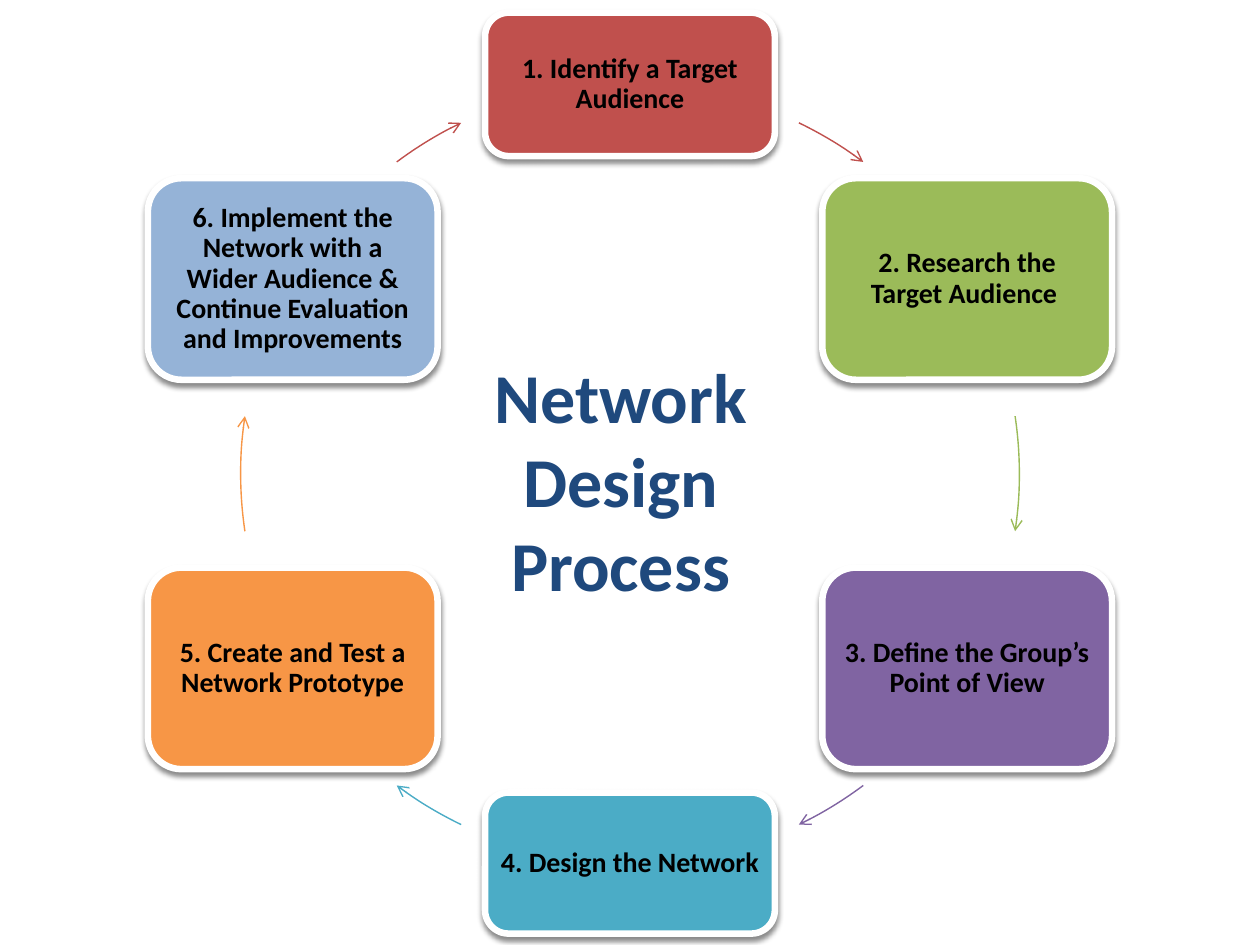
from math import cos, radians, sin

from lxml import etree
from pptx import Presentation
from pptx.dml.color import RGBColor
from pptx.enum.shapes import MSO_SHAPE as Shape
from pptx.enum.text import MSO_ANCHOR as Anchor, MSO_AUTO_SIZE as AutoSize, PP_ALIGN as Align
from pptx.oxml import parse_xml
from pptx.oxml.ns import nsdecls, qn
from pptx.util import Pt

COLORS = {
    "red": "C0504D",
    "green": "9BBB59",
    "purple": "8064A2",
    "teal": "4BACC6",
    "orange": "F79646",
    "blue": "95B3D7",
    "navy": "1F497D",
    "black": "000000",
    "white": "FFFFFF",
}
CENTER_X, CENTER_Y, RADIUS = 360, 270.7, 222.5
BOX_WIDTH = 165.6

STEPS = [
    ("1. Identify a Target Audience", "red", 82),
    ("2. Research the Target Audience ", "green", 115.2),
    ("3. Define the Group’s Point of View", "purple", 115.2),
    ("4. Design the Network", "teal", 80.6),
    ("5. Create and Test a Network Prototype", "orange", 115.2),
    ("6. Implement the Network with a Wider Audience & Continue Evaluation and Improvements",
     "blue", 115.2),
]
ARROWS = [
    (25.7, 36.8, "red"),
    (81.5, 98.5, "green"),
    (143.2, 154.3, "purple"),
    (205.7, 216.8, "teal"),
    (261.5, 278.5, "orange"),
    (323.2, 334.3, "red"),
]


def rgb(name):
    return RGBColor.from_string(COLORS[name])


def write_centered(text_frame, text, size, color):
    text_frame.word_wrap = True
    paragraph = text_frame.paragraphs[0]
    paragraph.text = text
    paragraph.alignment = Align.CENTER
    font = paragraph.font
    font.name, font.size, font.bold = "Calibri", Pt(size), True
    font.color.rgb = rgb(color)
    return paragraph


def add_soft_shadow(shape):
    shape.shadow.inherit = False
    effects = shape._element.spPr.find(qn("a:effectLst"))
    effects.append(parse_xml(
        f'<a:outerShdw {nsdecls("a")} blurRad="{Pt(3)}" dist="{Pt(2.4)}" dir="5400000" '
        f'rotWithShape="0"><a:srgbClr val="{COLORS["black"]}"><a:alpha val="45000"/>'
        '</a:srgbClr></a:outerShdw>'))


def add_step(slide, angle, text, color, height):
    left = CENTER_X + RADIUS * sin(radians(angle)) - BOX_WIDTH / 2
    top = CENTER_Y - RADIUS * cos(radians(angle)) - height / 2
    shape = slide.shapes.add_shape(
        Shape.ROUNDED_RECTANGLE, Pt(left), Pt(top), Pt(BOX_WIDTH), Pt(height))
    shape.fill.solid()
    shape.fill.fore_color.rgb = rgb(color)
    shape.line.color.rgb = rgb("white")
    shape.line.width = Pt(3.75)
    add_soft_shadow(shape)
    text_frame = shape.text_frame
    text_frame.vertical_anchor = Anchor.MIDDLE
    text_frame.margin_left = text_frame.margin_right = Pt(5)
    text_frame.margin_top = text_frame.margin_bottom = Pt(5)
    write_centered(text_frame, text, 16, "black").line_spacing = 0.9


def add_arc_arrow(slide, start, end, color):
    arc = slide.shapes.add_shape(
        Shape.ARC, Pt(CENTER_X - RADIUS), Pt(CENTER_Y - RADIUS), Pt(2 * RADIUS), Pt(2 * RADIUS))
    for index, angle in enumerate((start, end)):
        arc.adjustments[index] = (angle - 90) % 360 * 0.6
    arc.shadow.inherit = False
    arc.fill.background()
    arc.line.color.rgb = rgb(color)
    arc.line.width = Pt(0.79)
    etree.SubElement(arc.line._get_or_add_ln(), qn("a:tailEnd"), type="arrow")


def add_title(slide):
    box = slide.shapes.add_textbox(Pt(259.2), Pt(198.7), Pt(190.8), Pt(152.6))
    box.text_frame.auto_size = AutoSize.SHAPE_TO_FIT_TEXT
    write_centered(box.text_frame, "Network Design Process", 40, "navy")


def main():
    presentation = Presentation()
    presentation.slide_width, presentation.slide_height = Pt(720), Pt(540)
    slide = presentation.slides.add_slide(presentation.slide_layouts[6])
    for index, (step, arrow) in enumerate(zip(STEPS, ARROWS)):
        add_step(slide, index * 360 / len(STEPS), *step)
        add_arc_arrow(slide, *arrow)
    add_title(slide)
    presentation.save("out.pptx")


if __name__ == "__main__":
    main()
